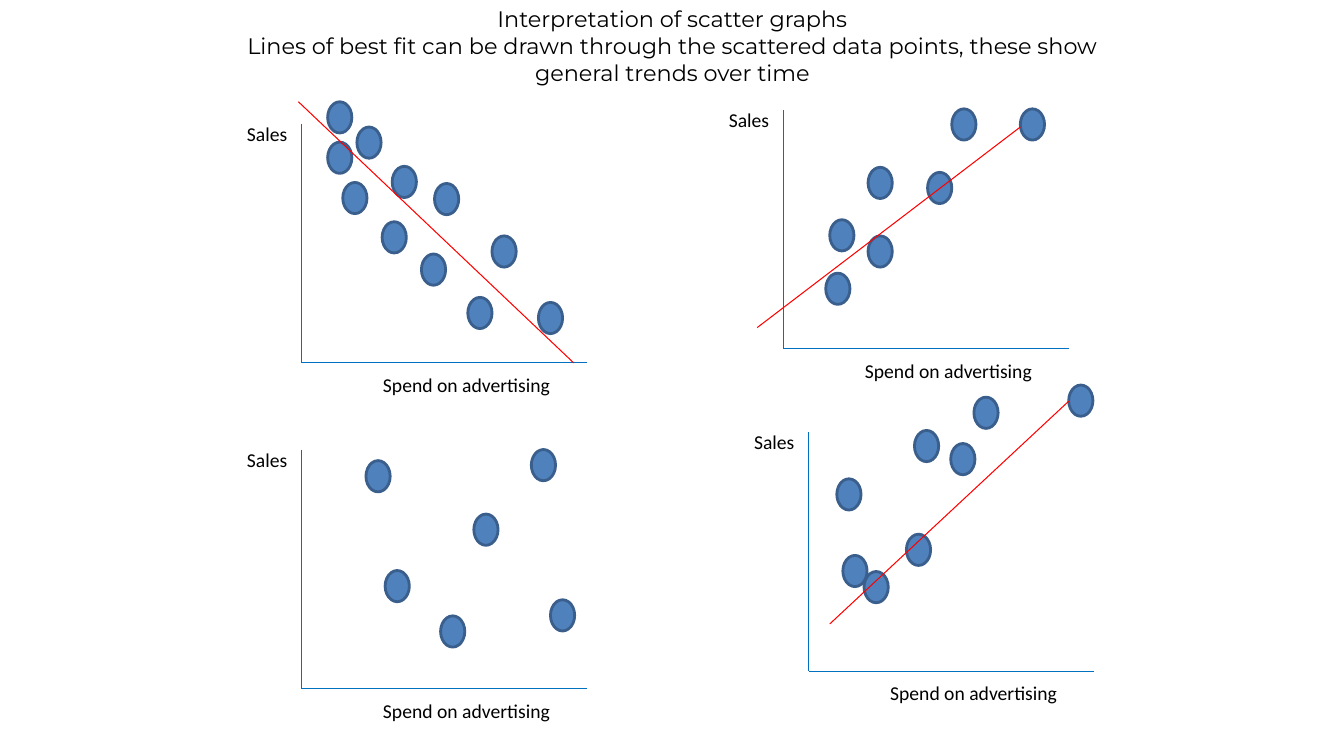
from pptx import Presentation
from pptx.dml.color import RGBColor
from pptx.enum.shapes import MSO_CONNECTOR, MSO_SHAPE
from pptx.enum.text import MSO_ANCHOR, MSO_AUTO_SIZE, PP_ALIGN
from pptx.oxml.ns import qn
from pptx.util import Inches, Pt
from lxml import etree

BLACK = RGBColor(0x00, 0x00, 0x00)
AXIS_BLUE = RGBColor(0x00, 0x70, 0xC0)
TREND_RED = RGBColor(0xFF, 0x00, 0x00)
DOT_FILL = RGBColor(0x4F, 0x81, 0xBD)
DOT_EDGE = RGBColor(0x3A, 0x5F, 0x8C)
STRAIGHT = MSO_CONNECTOR.STRAIGHT
OVAL = MSO_SHAPE.OVAL
MIDDLE, TOP = MSO_ANCHOR.MIDDLE, MSO_ANCHOR.TOP
CENTER, LEFT = PP_ALIGN.CENTER, PP_ALIGN.LEFT
GROW = MSO_AUTO_SIZE.SHAPE_TO_FIT_TEXT
FIXED = MSO_AUTO_SIZE.NONE

TITLE = [
    "Interpretation of scatter graphs",
    "Lines of best fit can be drawn through the scattered data points, "
    "these show general trends over time",
]

GRAPHS = [
    {"origin": (2.99, 3.6), "trend": (2.96, 1.01, 5.69, 3.6),
     "dots": [(3.25, 1.01), (3.25, 1.41), (3.54, 1.26), (3.4, 1.81),
              (3.89, 1.65), (3.79, 2.2), (4.31, 1.82), (4.18, 2.52),
              (4.88, 2.34), (4.64, 2.95), (5.34, 3)]},
    {"origin": (7.77, 3.46), "trend": (7.51, 3.25, 10.12, 1.26),
     "dots": [(10.12, 1.08), (9.44, 1.08), (9.2, 1.71), (8.61, 1.66),
              (8.61, 2.34), (8.23, 2.18), (8.19, 2.71)]},
    {"origin": (2.99, 6.83), "trend": None,
     "dots": [(4.37, 6.11), (3.82, 5.66), (5.46, 5.95), (5.27, 4.46),
              (4.7, 5.1), (3.63, 4.57)]},
    {"origin": (8.02, 6.66), "trend": (8.23, 6.19, 10.6, 3.98),
     "dots": [(8.36, 5.51), (10.6, 3.82), (9.66, 3.94), (9.43, 4.4),
              (9.07, 4.27), (8.99, 5.3), (8.3, 4.75), (8.57, 5.67)]},
]


def write_text(box, lines, size, font, align=LEFT, anchor=TOP, wrap=True, fit=FIXED):
    frame = box.text_frame
    frame.word_wrap = wrap
    frame.auto_size = fit
    frame.vertical_anchor = anchor
    for index, line in enumerate(lines):
        para = frame.add_paragraph() if index else frame.paragraphs[0]
        para.alignment = align
        span = para.add_run()
        span.text = line
        span.font.size = Pt(size)
        span.font.name = font
        span.font.color.rgb = BLACK


class ScatterPage:
    """Draws scatter graphs on one slide in a shared style."""

    axis_width, axis_height = 2.83, 2.37
    dot_width, dot_height = 0.24, 0.31
    label_height = 0.34

    def __init__(self, page):
        self.shapes = page.shapes

    def title(self, lines):
        box = self.shapes.add_textbox(Inches(2.17), Inches(0.3), Inches(9), Inches(0.3))
        write_text(box, lines, 16, "Montserrat", align=CENTER, anchor=MIDDLE)

    def line(self, shapes, ends, color):
        line = shapes.add_connector(STRAIGHT, *map(Inches, ends))
        line.line.color.rgb = color
        line.line.width = Pt(0.75)
        etree.SubElement(line._element.spPr, qn("a:effectLst"))

    def label(self, shapes, text, left, top, width):
        box = shapes.add_textbox(Inches(left), Inches(top), Inches(width), Inches(self.label_height))
        write_text(box, [text], 14, "Calibri", wrap=False, fit=GROW)

    def axes(self, left, bottom):
        shapes = self.shapes.add_group_shape().shapes
        top = bottom - self.axis_height
        self.line(shapes, (left, top, left, bottom), AXIS_BLUE)
        self.line(shapes, (left, bottom, left + self.axis_width, bottom), AXIS_BLUE)
        self.label(shapes, "Spend on advertising", left + 0.71, bottom + 0.05, 1.88)
        self.label(shapes, "Sales", left - 0.64, top - 0.07, 0.61)

    def dot(self, left, top):
        dot = self.shapes.add_shape(OVAL, Inches(left), Inches(top),
                                    Inches(self.dot_width), Inches(self.dot_height))
        dot.shadow.inherit = False
        dot.fill.solid()
        dot.fill.fore_color.rgb = DOT_FILL
        dot.line.color.rgb = DOT_EDGE
        dot.line.width = Pt(2)

    def graph(self, origin, trend, dots):
        self.axes(*origin)
        for place in dots:
            self.dot(*place)
        if trend:
            self.line(self.shapes, trend, TREND_RED)


def main():
    deck = Presentation()
    deck.slide_width, deck.slide_height = Inches(13.33), Inches(7.5)
    page = ScatterPage(deck.slides.add_slide(deck.slide_layouts[6]))
    page.title(TITLE)
    for graph in GRAPHS:
        page.graph(**graph)
    deck.save("out.pptx")


if __name__ == "__main__":
    main()
